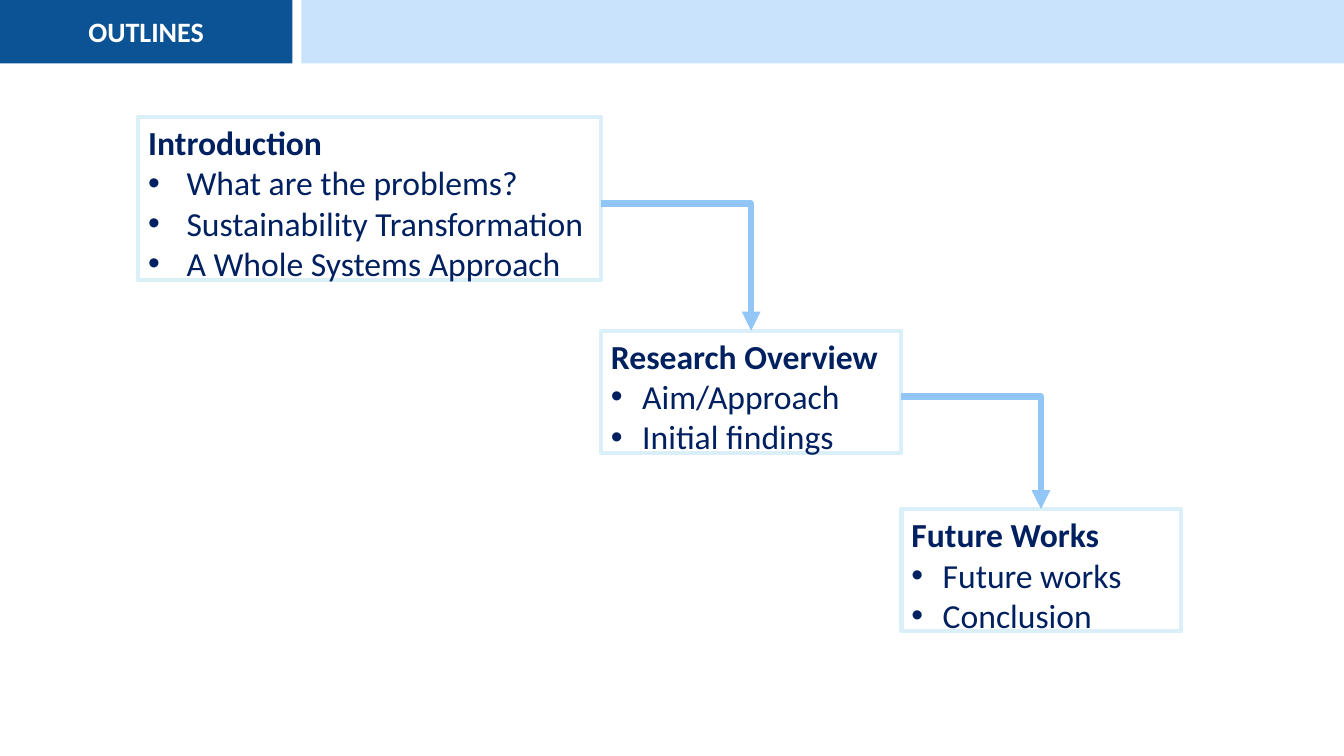
from lxml import etree
from pptx import Presentation
from pptx.dml.color import RGBColor
from pptx.enum import shapes, text
from pptx.oxml import ns
from pptx.util import Inches, Pt

HEADING = "OUTLINES"
# heading, bullets, top, width, height, bullet indent
STAGES = [
    ("Introduction",
     ["What are the problems?", "Sustainability Transformation", "A Whole Systems Approach"],
     1.16, 4.59, 1.72, 0.38),
    ("Research Overview", ["Aim/Approach", "Initial findings"], 3.28, 2.98, 1.31, 0.31),
    ("Future Works", ["Future works", "Conclusion"], 5.05, 2.77, 1.31, 0.31),
]
COLORS = {"banner": "0B5394", "band": "C8E3FB", "border": "DBEFF9",
          "arrow": "91C6F7", "ink": "002060", "white": "FFFFFF"}
FONT = "Calibri"
SLIDE_W, SLIDE_H = 13.33, 7.5
BANNER_W, BAND_LEFT, BAND_H = 2.9, 2.99, 0.63
FIRST_LEFT = 1.37
RIGHT, TOP = 3, 0  # connection sites


def color(name):
    return RGBColor.from_string(COLORS[name])


def place(shape, left, top, width, height):
    shape.left, shape.top = Inches(left), Inches(top)
    shape.width, shape.height = Inches(width), Inches(height)


def write(paragraph, words, *, size, ink, bold=False, align=text.PP_ALIGN.LEFT, indent=0):
    """Write one paragraph; a positive indent gives it a hanging bullet."""
    paragraph.alignment = align
    paragraph.space_before = paragraph.space_after = Pt(0)
    run = paragraph.add_run()
    run.text = words
    run.font.name, run.font.size, run.font.bold = FONT, Pt(size), bold
    run.font.color.rgb = color(ink)
    props = paragraph._p.get_or_add_pPr()
    props.set("marL", str(Inches(indent)))
    props.set("indent", str(-Inches(indent)))
    if indent:
        etree.SubElement(props, ns.qn("a:buFont"), typeface="Arial")
        etree.SubElement(props, ns.qn("a:buChar"), char="•")
    else:
        etree.SubElement(props, ns.qn("a:buNone"))


def link(slide, source, target):
    """Draw an arrow that leaves to the right and turns down once."""
    arrow = slide.shapes.add_connector(shapes.MSO_CONNECTOR.ELBOW, 0, 0, 0, 0)
    arrow.begin_connect(source, RIGHT)
    arrow.end_connect(target, TOP)
    arrow.line.color.rgb = color("arrow")
    arrow.line.width = Pt(4.5)
    props = arrow._element.spPr
    props.find(ns.qn("a:prstGeom")).set("prst", "bentConnector2")
    etree.SubElement(arrow.line._get_or_add_ln(), ns.qn("a:tailEnd"), type="triangle")
    etree.SubElement(props, ns.qn("a:effectLst"))


def main():
    deck = Presentation()
    deck.slide_width, deck.slide_height = Inches(SLIDE_W), Inches(SLIDE_H)
    slide = deck.slides.add_slide(deck.slide_layouts.get_by_name("Comparison"))
    title, *bodies = slide.placeholders

    # Header
    place(title, 0, 0, BANNER_W, BAND_H)
    title.fill.solid()
    title.fill.fore_color.rgb = color("banner")
    title.text_frame.auto_size = text.MSO_AUTO_SIZE.NONE
    title.text_frame.vertical_anchor = text.MSO_ANCHOR.MIDDLE
    write(title.text_frame.paragraphs[0], HEADING, size=20, ink="white", bold=True,
          align=text.PP_ALIGN.CENTER)
    band = slide.shapes.add_shape(shapes.MSO_SHAPE.RECTANGLE, Inches(BAND_LEFT), 0,
                                  Inches(SLIDE_W - BAND_LEFT), Inches(BAND_H))
    band.shadow.inherit = False
    band.fill.solid()
    band.fill.fore_color.rgb = color("band")
    band.line.fill.background()

    # Stages: each box starts where the one before it ends
    left = FIRST_LEFT
    for stage, (heading, bullets, top, width, height, indent) in zip(bodies, STAGES):
        place(stage, left, top, width, height)
        left += width
        stage.line.color.rgb = color("border")
        stage.line.width = Pt(3)
        frame = stage.text_frame
        frame.word_wrap = True
        frame.auto_size = text.MSO_AUTO_SIZE.SHAPE_TO_FIT_TEXT
        frame.vertical_anchor = text.MSO_ANCHOR.TOP
        write(frame.paragraphs[0], heading, size=24, ink="ink", bold=True)
        for bullet in bullets:
            write(frame.add_paragraph(), bullet, size=24, ink="ink", indent=indent)

    # Unused placeholders
    for spare in bodies[len(STAGES):]:
        spare._element.getparent().remove(spare._element)

    # Arrows from each stage to the next
    stages = bodies[:len(STAGES)]
    for source, target in zip(stages, stages[1:]):
        link(slide, source, target)

    deck.save("out.pptx")


if __name__ == "__main__":
    main()
